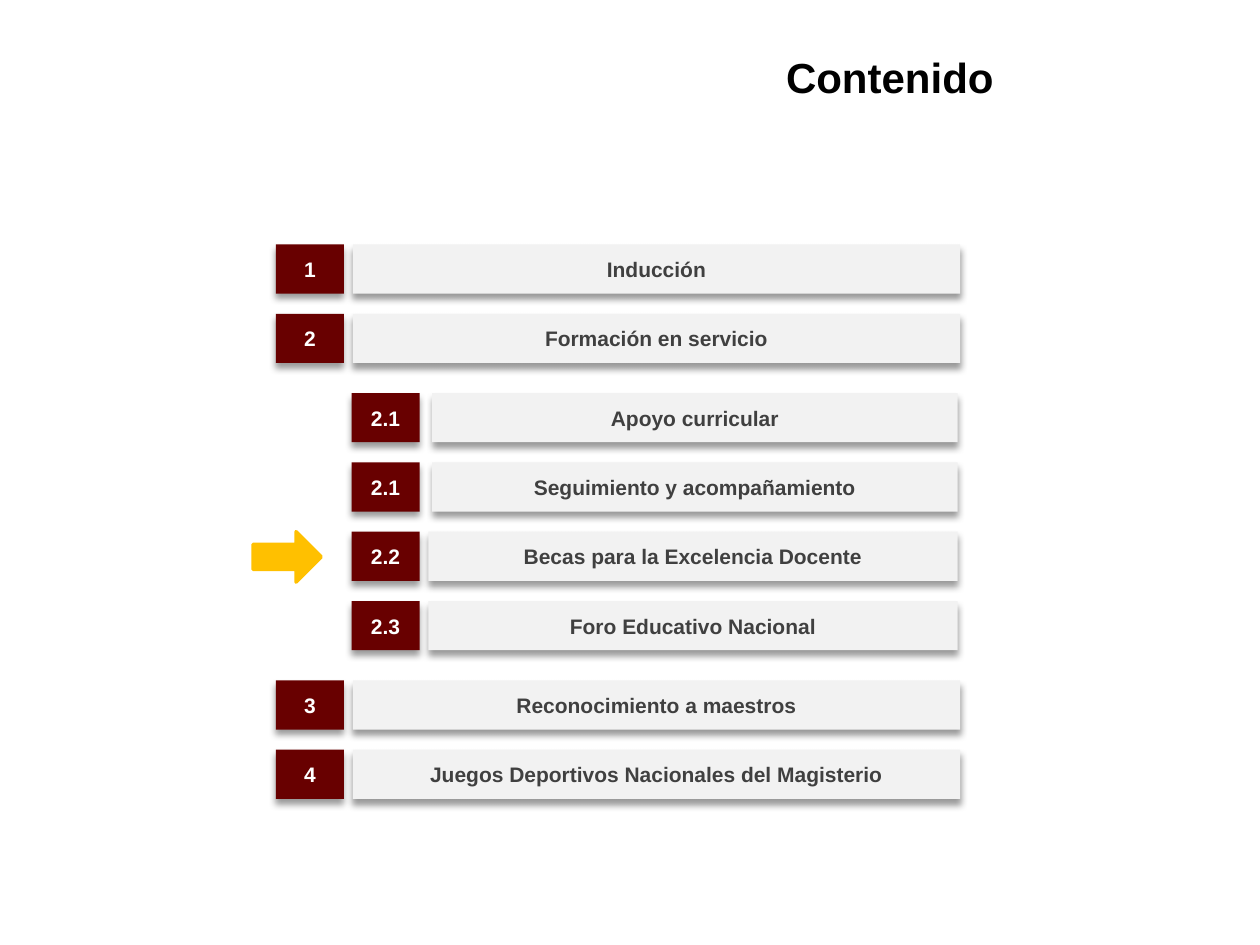
import pptx
import pptx.util
import pptx.dml.color
import pptx.enum.shapes
import pptx.enum.text
import pptx.oxml
import pptx.oxml.ns
from dataclasses import dataclass

Inches = pptx.util.Inches
SHAPES = pptx.enum.shapes.MSO_SHAPE


@dataclass(frozen=True)
class Theme:
    font: str = "Arial"
    title_size: int = 24
    row_size: int = 12
    title: str = "000000"
    number_fill: str = "680000"
    number_text: str = "FFFFFF"
    label_fill: str = "F2F2F2"
    label_text: str = "404040"
    arrow: str = "FFC000"


THEME = Theme()
TITLE = "Contenido"
CURRENT = "2.2"

# number, label, level, left edge of the label
ROWS = [
    ("1", "Inducción", "main", 2.8),
    ("2", "Formación en servicio", "main", 2.8),
    ("2.1", "Apoyo curricular", "sub", 3.43),
    ("2.1", "Seguimiento y acompañamiento", "sub", 3.43),
    ("2.2", "Becas para la Excelencia Docente", "sub", 3.4),
    ("2.3", "Foro Educativo Nacional", "sub", 3.4),
    ("3", "Reconocimiento a maestros", "main", 2.8),
    ("4", "Juegos Deportivos Nacionales del Magisterio", "main", 2.8),
]
NUMBER_LEFT = {"main": 2.19, "sub": 2.79}
LABEL_RIGHT = {"main": 7.62, "sub": 7.6}
FIRST_TOP, ROW_STEP, LEVEL_GAP = 1.94, 0.55, 0.08
NUMBER_WIDTH, ROW_HEIGHT = 0.54, 0.39

SHADOW = (
    f'<a:effectLst {pptx.oxml.ns.nsdecls("a")}>'
    '<a:outerShdw blurRad="50800" dist="38100" dir="5400000" rotWithShape="0">'
    '<a:srgbClr val="000000"><a:alpha val="40000"/></a:srgbClr>'
    '</a:outerShdw></a:effectLst>'
)


def color(value):
    return pptx.dml.color.RGBColor.from_string(value)


def style_text(paragraph, size, text_color):
    for run in paragraph.runs:
        run.font.name = THEME.font
        run.font.size = pptx.util.Pt(size)
        run.font.bold = True
        run.font.color.rgb = color(text_color)


def add_title(slide):
    box = slide.shapes.add_textbox(Inches(6.14), Inches(0.36), Inches(3.86), Inches(0.5))
    frame = box.text_frame
    frame.word_wrap = True
    frame.auto_size = pptx.enum.text.MSO_AUTO_SIZE.SHAPE_TO_FIT_TEXT
    frame.text = TITLE
    style_text(frame.paragraphs[0], THEME.title_size, THEME.title)


def add_bar(slide, left, top, width, text, fill, text_color):
    bar = slide.shapes.add_shape(
        SHAPES.RECTANGLE, Inches(left), Inches(top), Inches(width), Inches(ROW_HEIGHT))
    bar.fill.solid()
    bar.fill.fore_color.rgb = color(fill)
    bar.line.fill.background()
    bar._element.spPr.append(pptx.oxml.parse_xml(SHADOW))
    frame = bar.text_frame
    frame.word_wrap = True
    frame.vertical_anchor = pptx.enum.text.MSO_ANCHOR.MIDDLE
    frame.text = text
    paragraph = frame.paragraphs[0]
    paragraph.alignment = pptx.enum.text.PP_ALIGN.CENTER
    style_text(paragraph, THEME.row_size, text_color)


def add_arrow(slide, top):
    arrow = slide.shapes.add_shape(
        SHAPES.RIGHT_ARROW, Inches(2.01), Inches(top), Inches(0.54), Inches(0.4))
    arrow.shadow.inherit = False
    arrow.fill.solid()
    arrow.fill.fore_color.rgb = color(THEME.arrow)
    arrow.line.color.rgb = color(THEME.arrow)
    arrow.line.width = pptx.util.Pt(2)


def add_rows(slide):
    top = FIRST_TOP
    previous_level = ROWS[0][2]
    for number, label, level, label_left in ROWS:
        if level != previous_level:
            top += LEVEL_GAP
        add_bar(slide, label_left, top, LABEL_RIGHT[level] - label_left,
                label, THEME.label_fill, THEME.label_text)
        add_bar(slide, NUMBER_LEFT[level], top, NUMBER_WIDTH,
                number, THEME.number_fill, THEME.number_text)
        if number == CURRENT:
            add_arrow(slide, top)
        top += ROW_STEP
        previous_level = level


def main():
    presentation = pptx.Presentation()
    presentation.slide_width = Inches(10)
    presentation.slide_height = Inches(7.5)
    slide = presentation.slides.add_slide(presentation.slide_layouts[6])
    add_title(slide)
    add_rows(slide)
    presentation.save("out.pptx")


if __name__ == "__main__":
    main()
